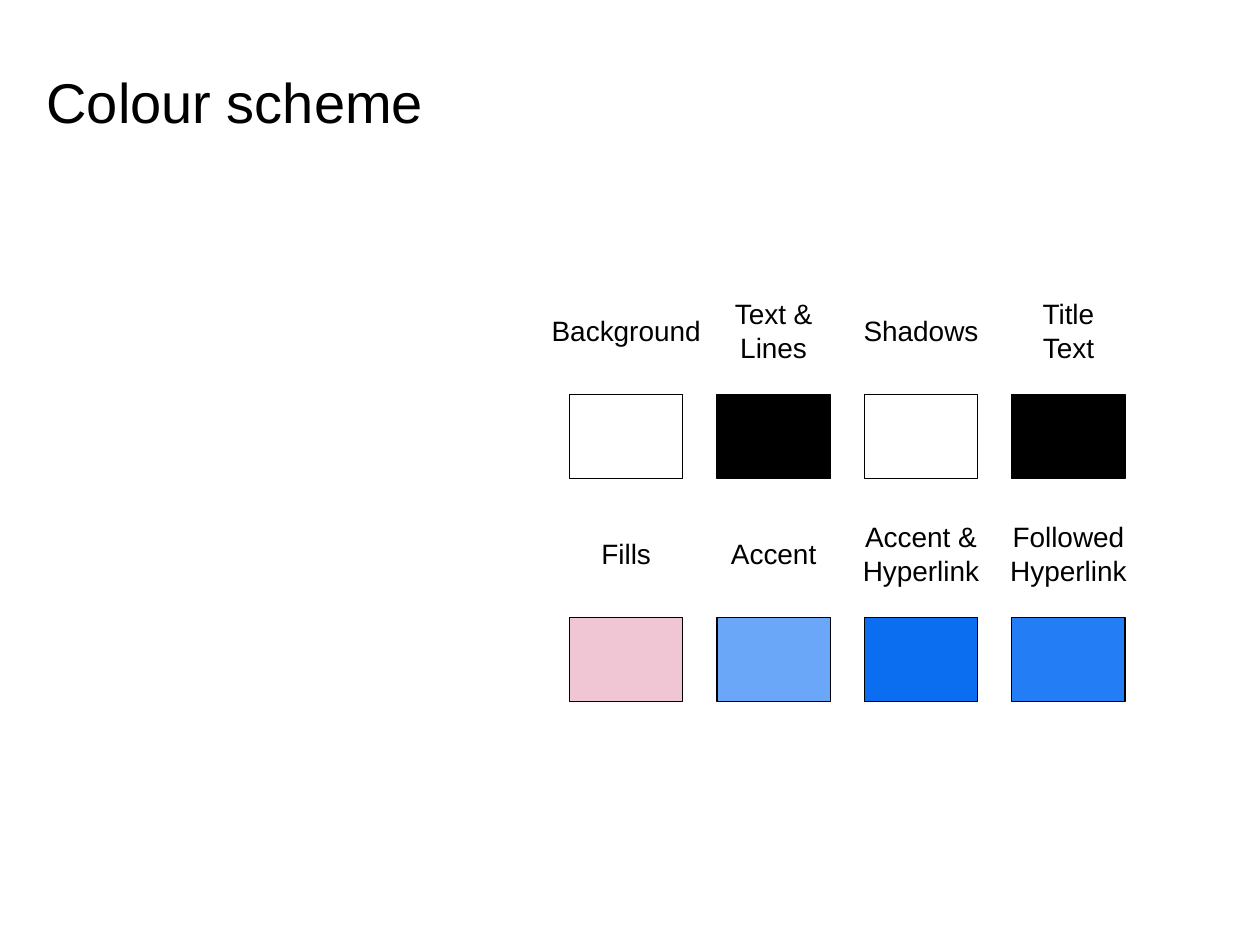
from pptx import Presentation, util as u
from pptx.dml.color import RGBColor
from pptx.enum import shapes, text

COLOURS = {
    "background": "FFFFFF",
    "text": "000000",
    "shadow": "FFFFFF",
    "title": "000000",
    "fill": "F0C5D4",
    "accent": "6BA7F8",
    "hyperlink": "0B6DEF",
    "followed": "237DF5",
}

SWATCHES = [
    [("Background", "background"), ("Text &\nLines", "text"),
     ("Shadows", "shadow"), ("Title\nText", "title")],
    [("Fills", "fill"), ("Accent", "accent"),
     ("Accent &\nHyperlink", "hyperlink"), ("Followed\nHyperlink", "followed")],
]


def rgb(name):
    return RGBColor.from_string(COLOURS[name])


def write(tf, content, size=16, align=text.PP_ALIGN.CENTER, colour="text", font="Arial", wrap=False):
    tf.word_wrap = wrap
    tf.vertical_anchor = text.MSO_ANCHOR.MIDDLE
    tf.text = content
    for p in tf.paragraphs:
        p.alignment = align
        for r in p.runs:
            r.font.name = font
            r.font.size = u.Pt(size)
            r.font.color.rgb = rgb(colour)


class Palette:
    """Draws a titled grid of labelled colour swatches on one slide."""

    left, top = 4.52, 3.13
    pitch, step = 1.17, 1.77
    width, height = 0.9, 0.67
    label_width, label_height, label_rise = 1.4, 0.64, 0.83

    def __init__(self, prs):
        self.s = prs.slides.add_slide(prs.slide_layouts[6])
        self.s.background.fill.solid()
        self.s.background.fill.fore_color.rgb = rgb("background")

    def cell(self, col, row):
        return self.left + col * self.pitch, self.top + row * self.step

    def box(self, x, y, w, h):
        return self.s.shapes.add_textbox(*map(u.Inches, (x, y, w, h))).text_frame

    def title(self, content):
        write(self.box(0.27, 0.3, 7.48, 1.01), content, size=32,
              align=text.PP_ALIGN.LEFT, colour="title", wrap=True)

    def swatch(self, col, row, colour):
        x, y = self.cell(col, row)
        sp = self.s.shapes.add_shape(
            shapes.MSO_SHAPE.RECTANGLE, *map(u.Inches, (x, y, self.width, self.height)))
        sp.shadow.inherit = False
        sp.fill.solid()
        sp.fill.fore_color.rgb = rgb(colour)
        sp.line.color.rgb = rgb("text")
        sp.line.width = u.Pt(0.75)

    def label(self, col, row, content):
        x, y = self.cell(col, row)
        write(self.box(x + (self.width - self.label_width) / 2, y - self.label_rise,
                       self.label_width, self.label_height), content)


def main():
    prs = Presentation()
    prs.slide_width, prs.slide_height = u.Inches(10), u.Inches(7.5)
    palette = Palette(prs)
    palette.title("Colour scheme")
    for row, entries in enumerate(SWATCHES):
        for col, (name, colour) in enumerate(entries):
            palette.swatch(col, row, colour)
            palette.label(col, row, name)
    prs.save("out.pptx")


if __name__ == "__main__":
    main()
